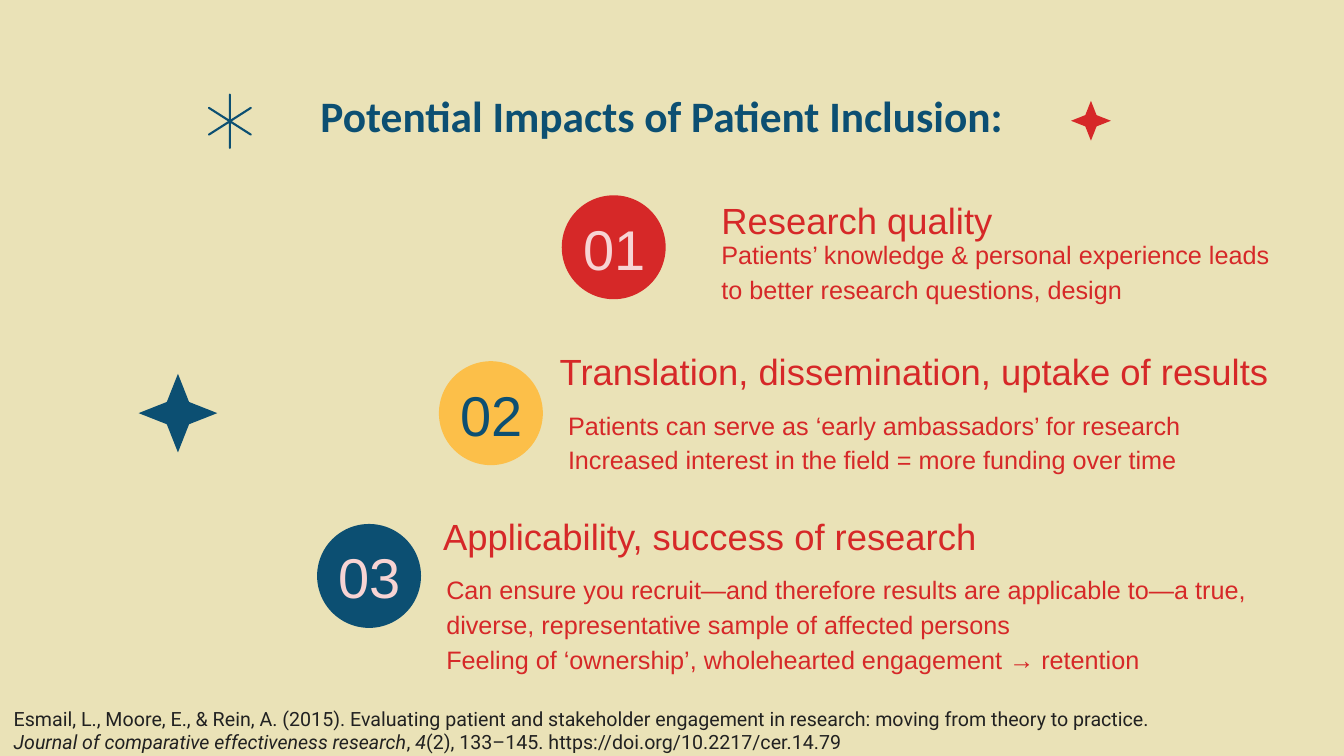
import pptx
import pptx.dml.color
import pptx.enum.shapes
import pptx.enum.text
import pptx.util

PX = 9525  # EMU per px, 96 px to the inch
COLORS = {
    "sand": "EAE2B7", "navy": "0C4F72", "red": "D62828",
    "yellow": "FCBF49", "pink": "F7D4D4", "ink": "212121",
}
SHAPE = pptx.enum.shapes.MSO_SHAPE
ANCHOR = pptx.enum.text.MSO_ANCHOR
ALIGN = pptx.enum.text.PP_ALIGN
AUTO = pptx.enum.text.MSO_AUTO_SIZE

CENTER = {"alignment": ALIGN.CENTER}
BODY = {"line_spacing": 1.15}
MIDDLE = (12, 12, 12, 12)


def rgb(name):
    return pptx.dml.color.RGBColor.from_string(COLORS[name])


class Deck:
    def __init__(self, width, height, background):
        self.prs = pptx.Presentation()
        self.prs.slide_width = width * PX
        self.prs.slide_height = height * PX
        self.s = self.prs.slides.add_slide(self.prs.slide_layouts[6])
        self.s.background.fill.solid()
        self.s.background.fill.fore_color.rgb = rgb(background)

    def shape(self, kind, box, fill=None, line=None, adjust=None, rotation=0):
        sp = self.s.shapes.add_shape(kind, *(v * PX for v in box))
        sp.shadow.inherit = False
        sp.rotation = rotation
        if adjust is not None:
            sp.adjustments[0] = adjust
        if fill:
            sp.fill.solid()
            sp.fill.fore_color.rgb = rgb(fill)
        else:
            sp.fill.background()
        if line:
            sp.line.color.rgb = rgb(line)
            sp.line.width = pptx.util.Pt(1.5)
        else:
            sp.line.fill.background()

    def text(self, box, paragraphs, size, color, font="Arial", bold=None,
             fmt=None, insets=MIDDLE, anchor=ANCHOR.MIDDLE, auto=AUTO.NONE):
        """Each paragraph is a list of (text, italic) runs."""
        tf = self.s.shapes.add_textbox(*(v * PX for v in box)).text_frame
        sides = ("margin_left", "margin_top", "margin_right", "margin_bottom")
        frame = {"word_wrap": True, "vertical_anchor": anchor, "auto_size": auto}
        frame.update(zip(sides, (v * PX for v in insets)))
        for key, value in frame.items():
            setattr(tf, key, value)
        for i, runs in enumerate(paragraphs):
            p = tf.paragraphs[0] if i == 0 else tf.add_paragraph()
            for key, value in (fmt or {}).items():
                setattr(p, key, value)
            for words, italic in runs:
                r = p.add_run()
                r.text = words
                style = {"name": font, "size": pptx.util.Pt(size),
                         "bold": bold, "italic": italic}
                for key, value in style.items():
                    setattr(r.font, key, value)
                r.font.color.rgb = rgb(color)

    def badge(self, left, top, number, fill, color):
        self.shape(SHAPE.OVAL, (left, top, 99, 99), fill)
        self.text((left - 4, top + 8, 108, 84), [[(number, None)]], 40, color,
                  fmt=CENTER)

    def heading(self, box, words):
        self.text(box, [[(words, None)]], 26, "red")

    def body(self, box, lines, **style):
        style.setdefault("fmt", BODY)
        self.text(box, [[(line, None)] for line in lines], 18, "red", **style)


def main():
    deck = Deck(1280, 720, "sand")

    # Title
    deck.text((239, 76, 782, 67),
              [[("Potential Impacts of Patient Inclusion:", None)]],
              31, "navy", font="Calibri", bold=True, fmt=CENTER)

    # Impact 02
    deck.badge(418, 344, "02", "yellow", "navy")
    deck.heading((521, 324, 758, 58),
                 "Translation, dissemination, uptake of results")

    # Impact 03
    deck.badge(302, 499, "03", "navy", "pink")
    deck.heading((410, 481, 841, 58), "Applicability, success of research")
    deck.body((413, 552, 796, 81), [
        "Can ensure you recruit—and therefore results are applicable to—a true, "
        "diverse, representative sample of affected persons",
        "Feeling of ‘ownership’, wholehearted engagement → retention"])

    # Impact 01
    deck.badge(535, 186, "01", "red", "pink")
    deck.heading((675, 180, 503, 58), "Research quality")
    deck.body((675, 216, 564, 81), [
        "Patients’ knowledge & personal experience leads to better research "
        "questions, design"],
        fmt={**BODY, "space_before": pptx.util.Pt(12)})

    # Decorative stars
    deck.shape(SHAPE.STAR_4_POINT, (132, 356, 75, 75), "navy", adjust=0.2)
    deck.shape(SHAPE.STAR_6_POINT, (199, 90, 40, 51), line="navy", adjust=0)
    deck.shape(SHAPE.STAR_4_POINT, (1020, 96, 38, 38), "red", adjust=0.2,
               rotation=270)

    # Details of impact 02
    deck.body((519, 381, 680, 77), [
        "Patients can serve as ‘early ambassadors’ for research",
        "Increased interest in the field = more funding over time"],
        insets=(22, 5, 10, 5), anchor=ANCHOR.TOP, auto=AUTO.SHAPE_TO_FIT_TEXT)

    # Citation
    deck.text((3, 668, 1162, 55), [[
        ("Esmail, L., Moore, E., & Rein, A. (2015). Evaluating patient and "
         "stakeholder engagement in research: moving from theory to practice. ",
         False),
        ("Journal of comparative effectiveness research", True),
        (", ", False),
        ("4", True),
        ("(2), 133–145. https://doi.org/10.2217/cer.14.79", False)]],
        14, "ink", font="Roboto", insets=(10, 5, 10, 5), anchor=ANCHOR.TOP,
        auto=AUTO.SHAPE_TO_FIT_TEXT)

    deck.prs.save("out.pptx")


if __name__ == "__main__":
    main()
